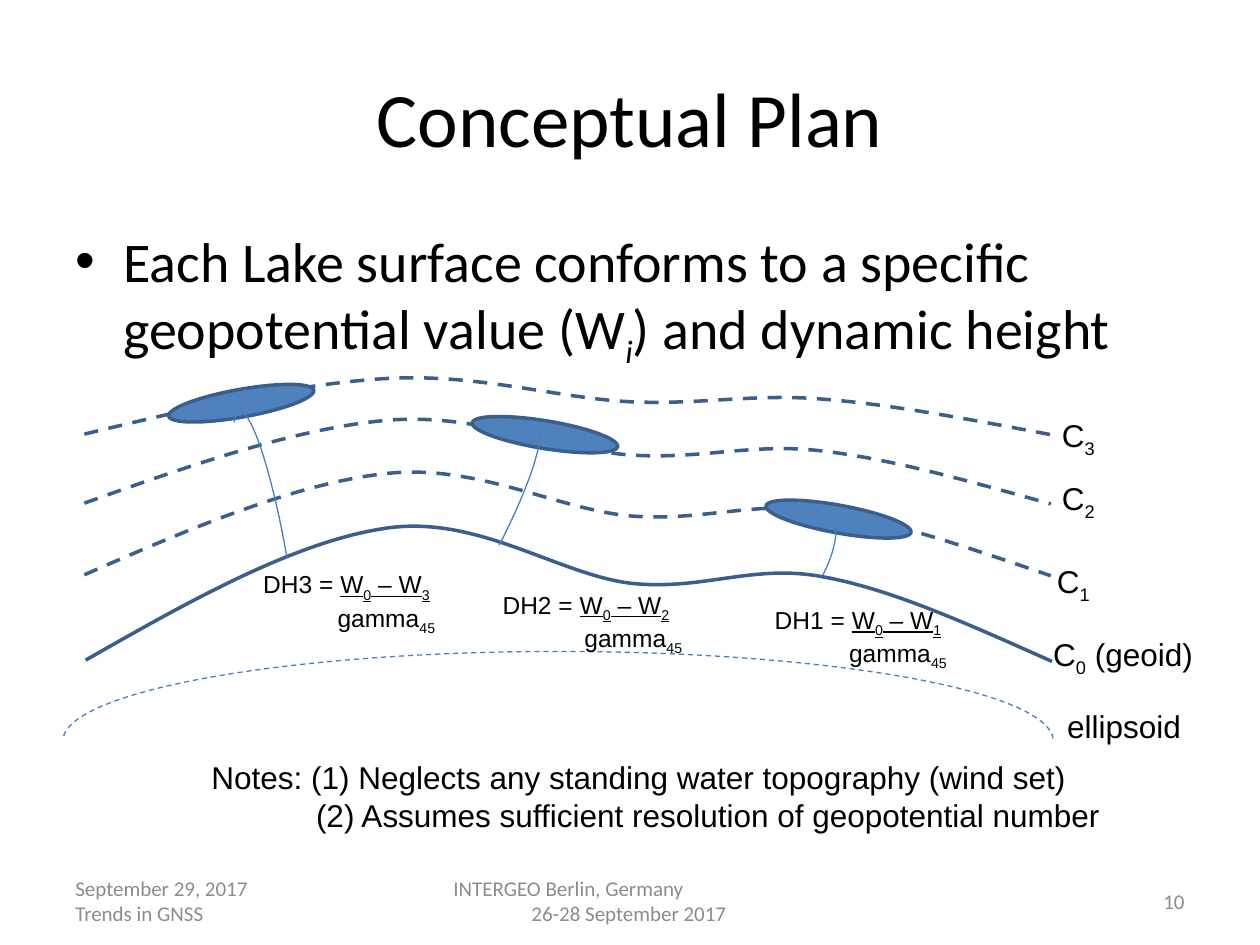
from lxml import etree
from pptx import Presentation
from pptx.dml.color import RGBColor
from pptx.enum import dml, shapes, text
from pptx.oxml.ns import qn
from pptx.util import Inches, Pt

BLACK = RGBColor(0x00, 0x00, 0x00)
GREY = RGBColor(0x8C, 0x8C, 0x8C)
LAKE_BLUE = RGBColor(0x4F, 0x81, 0xBD)
CONTOUR_BLUE = RGBColor(0x3A, 0x5F, 0x8C)
THIN_BLUE = RGBColor(0x4B, 0x7E, 0xBC)

LEFT, CENTER, RIGHT = text.PP_ALIGN.LEFT, text.PP_ALIGN.CENTER, text.PP_ALIGN.RIGHT
TOP, MIDDLE = text.MSO_ANCHOR.TOP, text.MSO_ANCHOR.MIDDLE
LINE_BREAK = ("\n", "")

# Bezier points of the geoid, in inches from the top left of its box:
# every third one lies on the curve
PROFILE = [(0, 1.06), (0.84, 0.58), (1.68, 0.11), (2.4, 0.01), (3.12, -0.09),
           (3.75, 0.38), (4.33, 0.45), (4.91, 0.51), (5.3, 0.29), (5.86, 0.4),
           (6.41, 0.5), (7.04, 0.79), (7.67, 1.07)]
PROFILE_HEIGHT = 1.07


def add_text(slide, box, paragraphs, size, font="Arial", color=BLACK,
             anchor=TOP, wrap=False):
    """Each paragraph is (runs, alignment, left margin, first line indent); each run is
    (words, marks), where the marks are s for subscript, u for underline, i for italic."""
    frame = slide.shapes.add_textbox(*map(Inches, box)).text_frame
    frame.word_wrap = wrap
    frame.vertical_anchor = anchor
    for index, (runs, align, margin, indent) in enumerate(paragraphs):
        paragraph = frame.paragraphs[0] if index == 0 else frame.add_paragraph()
        paragraph.alignment = align
        if margin:
            properties = paragraph._p.get_or_add_pPr()
            properties.set("marL", str(Inches(margin)))
            properties.set("indent", str(Inches(indent)))
        for words, marks in runs:
            if (words, marks) == LINE_BREAK:
                paragraph.add_line_break()
                continue
            run = paragraph.add_run()
            run.text = words
            run.font.name = font
            run.font.size = Pt(size)
            run.font.color.rgb = color
            if "u" in marks:
                run.font.underline = True
            if "i" in marks:
                run.font.italic = True
            if "s" in marks:
                run._r.get_or_add_rPr().set("baseline", "-25000")
    return frame


def plain(words, align=LEFT, margin=0):
    return [(words, "")], align, margin, 0


def two_lines(first, second, margin=0, indent=0):
    return [(first, ""), LINE_BREAK, (second, "")], LEFT, margin, indent


def style_line(shape, color, width, dashed=False):
    shape.shadow.inherit = False
    shape.line.color.rgb = color
    shape.line.width = Pt(width)
    if dashed:
        shape.line.dash_style = dml.MSO_LINE.DASH


def add_arc(slide, box, start, rotation=0, dashed=False):
    arc = slide.shapes.add_shape(shapes.MSO_SHAPE.ARC, *map(Inches, box))
    arc.adjustments[0] = start
    arc.adjustments[1] = 0
    arc.rotation = rotation
    arc.fill.background()
    style_line(arc, THIN_BLUE, 0.75, dashed)


def add_contour(slide, left, top, height, dashed=True):
    """Draws the geoid profile, flattened to the given height."""
    scale = height / PROFILE_HEIGHT
    points = [(Inches(left + x), Inches(top + y * scale)) for x, y in PROFILE]
    builder = slide.shapes.build_freeform(*points[0])
    builder.add_line_segments(points[3::3], close=False)
    contour = builder.convert_to_shape()
    segments = list(contour._element.iter(qn("a:lnTo")))
    for index, segment in enumerate(segments):
        curve = etree.Element(qn("a:cubicBezTo"))
        for x, y in points[3 * index + 1:3 * index + 4]:
            etree.SubElement(curve, qn("a:pt"), x=str(x - contour.left),
                             y=str(y - contour.top))
        segment.getparent().replace(segment, curve)
    contour.fill.background()
    style_line(contour, CONTOUR_BLUE, 2, dashed)


def add_lake(slide, left, top, rotation):
    lake = slide.shapes.add_shape(shapes.MSO_SHAPE.OVAL, Inches(left), Inches(top),
                                  Inches(1.17), Inches(0.22))
    lake.rotation = rotation
    lake.fill.solid()
    lake.fill.fore_color.rgb = LAKE_BLUE
    style_line(lake, CONTOUR_BLUE, 2)


def add_dynamic_height(slide, box, number, gamma_margin):
    numerator = [(f"DH{number} = ", ""), ("W", "u"), ("0", "us"),
                 (" – W", "u"), (number, "us")]
    denominator = [("gamma", ""), ("45", "s")]
    add_text(slide, box, [(numerator, LEFT, 0, 0),
                          (denominator, LEFT, gamma_margin, 0)], 14)


def add_heading(slide):
    add_text(slide, (0.5, 0.3, 9, 1.25), [plain("Conceptual Plan", CENTER)], 44,
             "Calibri", anchor=MIDDLE, wrap=True)


def add_statement(slide):
    runs = [("Each Lake surface conforms to a specific geopotential value (W", ""),
            ("i", "is"), (") and dynamic height", "")]
    frame = add_text(slide, (0.5, 1.75, 9, 4.95), [(runs, LEFT, 0.38, -0.38)], 32,
                     "Calibri", wrap=True)
    properties = frame.paragraphs[0]._p.get_or_add_pPr()
    etree.SubElement(properties, qn("a:buFont")).set("typeface", "Arial")
    etree.SubElement(properties, qn("a:buChar")).set("char", "•")


def add_footer(slide, top=6.95, height=0.4):
    parts = [
        (0.5, 2.33, two_lines("September 29, 2017", "Trends in GNSS")),
        (3.42, 3.17, two_lines("INTERGEO Berlin, Germany", "26-28 September 2017",
                               0.7, -0.62)),
        (7.17, 2.33, plain("10", RIGHT)),
    ]
    for left, width, paragraph in parts:
        add_text(slide, (left, top, width, height), [paragraph], 12, "Calibri", GREY,
                 MIDDLE, wrap=True)


def add_surfaces(slide):
    add_arc(slide, (0.5, 5.17, 7.86, 1.42), 108.35, dashed=True)
    add_contour(slide, 0.68, 4.18, PROFILE_HEIGHT, dashed=False)
    for top, height in ((3.75, 0.82), (3.33, 0.67), (3, 0.45)):
        add_contour(slide, 0.67, top, height)

    add_text(slide, (8.37, 5.56, 1.11, 0.4), [plain("ellipsoid")], 18)
    for number, left, top, width, suffix in (("0", 8.26, 4.99, 1.42, " (geoid)"),
                                             ("1", 8.29, 4.41, 0.5, ""),
                                             ("2", 8.33, 3.75, 0.5, ""),
                                             ("3", 8.33, 3.25, 0.5, "")):
        runs = [("C", ""), (number, "s")] + ([(suffix, "")] if suffix else [])
        add_text(slide, (left, top, width, 0.4), [(runs, LEFT, 0, 0)], 18, wrap=True)


def add_lakes(slide):
    for left, top, rotation in ((1.33, 3.09, 349.9), (3.74, 3.34, 9.3),
                                (6.07, 4.01, 10.3)):
        add_lake(slide, left, top, rotation)
    for plumb_line, rotation in (((1.94, 3.25, 0.34, 2.4), 350.1),
                                 ((3.64, 3.27, 0.34, 1.96), 27.4),
                                 ((6.21, 4.04, 0.34, 0.89), 27.4)):
        add_arc(slide, plumb_line, 160.17, rotation)
    add_dynamic_height(slide, (1.99, 4.47, 1.61, 0.57), "3", 0.59)
    add_dynamic_height(slide, (3.89, 4.63, 1.71, 0.57), "2", 0.65)
    add_dynamic_height(slide, (6.05, 4.75, 1.61, 0.57), "1", 0.59)


def add_remarks(slide):
    add_text(slide, (1.58, 5.97, 7.32, 0.71), [
        plain("Notes: (1) Neglects any standing water topography (wind set)"),
        plain("(2) Assumes sufficient resolution of geopotential number", LEFT, 0.83),
    ], 18)


def main():
    deck = Presentation()
    deck.slide_width, deck.slide_height = Inches(10), Inches(7.5)
    slide = deck.slides.add_slide(deck.slide_layouts[6])
    for add_region in (add_heading, add_statement, add_footer, add_surfaces,
                       add_lakes, add_remarks):
        add_region(slide)
    deck.save("out.pptx")


if __name__ == "__main__":
    main()
